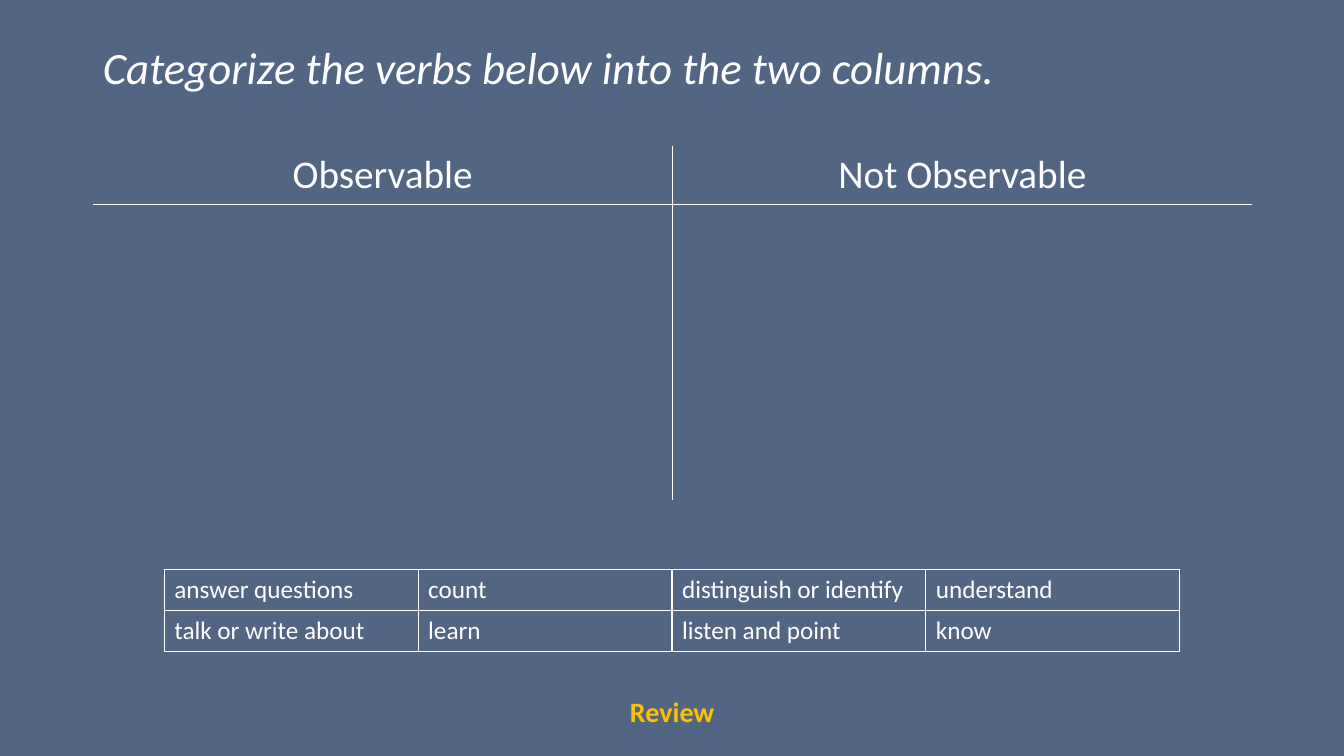
from lxml import etree
from pptx import Presentation
from pptx.dml.color import RGBColor
from pptx.enum.text import MSO_ANCHOR, PP_ALIGN
from pptx.oxml.ns import qn
from pptx.util import Inches, Pt

COLORS = {"background": "526582", "white": "FFFFFF", "gold": "FFC000"}
FONT = "Calibri"


def add_text(paragraph, text, size, color="white", bold=False, italic=False):
    run = paragraph.add_run()
    run.text = text
    run.font.name = FONT
    run.font.size = Pt(size)
    run.font.bold = bold
    run.font.italic = italic
    run.font.color.rgb = RGBColor.from_string(COLORS[color])


def format_cell(cell, text, size, sides):
    """Fill in one transparent cell with white borders on the given sides (L, R, T, B)."""
    properties = cell._tc.get_or_add_tcPr()
    for side in "LRTB":
        line = etree.SubElement(properties, qn(f"a:ln{side}"), w=str(Pt(1)))
        if side in sides:
            fill = etree.SubElement(line, qn("a:solidFill"))
            etree.SubElement(fill, qn("a:srgbClr"), val=COLORS["white"])
        else:
            etree.SubElement(line, qn("a:noFill"))
    cell.fill.background()
    if text:
        add_text(cell.text_frame.paragraphs[0], text, size)


presentation = Presentation()
presentation.slide_width = Inches(13.33)
presentation.slide_height = Inches(7.5)
slide = presentation.slides.add_slide(presentation.slide_layouts[5])
slide.background.fill.solid()
slide.background.fill.fore_color.rgb = RGBColor.from_string(COLORS["background"])

# Title
title = slide.shapes.title
title.left, title.top = Inches(0.92), Inches(0.4)
title.width, title.height = Inches(11.5), Inches(1.45)
title.text_frame.vertical_anchor = MSO_ANCHOR.TOP
paragraph = title.text_frame.paragraphs[0]
paragraph.alignment = PP_ALIGN.LEFT
paragraph.line_spacing = 0.9
add_text(paragraph, "Categorize the verbs below into the two columns.", 32, italic=True)

# Sorting chart: a T of borders around two headings
sorting = slide.shapes.add_table(
    2, 2, Inches(0.92), Inches(1.45), Inches(11.5), Inches(3.5)).table
sorting.first_row = sorting.horz_banding = False
sorting.rows[0].height = Inches(0.57)
sorting.rows[1].height = Inches(2.93)
for column, heading in enumerate(["Observable", "Not Observable"]):
    inner_side = "RL"[column]
    format_cell(sorting.cell(0, column), heading, 28, inner_side + "B")
    format_cell(sorting.cell(1, column), "", 28, inner_side + "T")
    sorting.cell(0, column).text_frame.paragraphs[0].alignment = PP_ALIGN.CENTER

# Word bank
verbs = [
    ["answer questions", "count", "distinguish or identify", "understand"],
    ["talk or write about", "learn", "listen and point", "know"],
]
word_bank = slide.shapes.add_table(
    2, 4, Inches(1.63), Inches(5.65), Inches(10.07), Inches(0.81)).table
word_bank.first_row = word_bank.horz_banding = False
for row, row_verbs in enumerate(verbs):
    for column, verb in enumerate(row_verbs):
        format_cell(word_bank.cell(row, column), verb, 18, "LRTB")

# Footer label
review = slide.shapes.add_textbox(Inches(6.15), Inches(6.88), Inches(1.13), Inches(0.42))
review.text_frame.word_wrap = True
paragraph = review.text_frame.paragraphs[0]
paragraph.line_spacing = 0.9
add_text(paragraph, "Review", 20, "gold", bold=True)

presentation.save("out.pptx")
